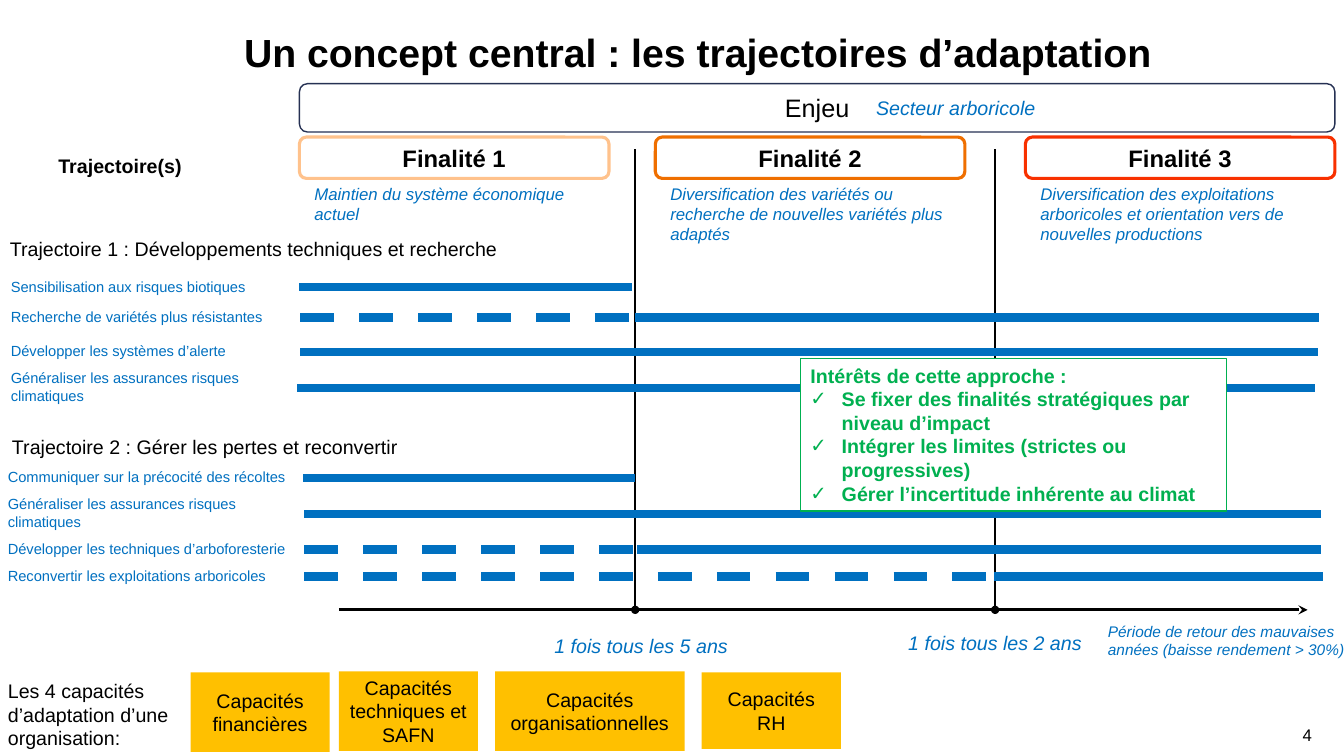
"""Build the slide on adaptation pathways for the fruit-growing sector."""
from lxml import etree
from pptx import Presentation
from pptx import util as u
from pptx.dml.color import RGBColor
from pptx.enum import dml, shapes, text
from pptx.oxml import ns

COLORS = {"black": "000000", "white": "FFFFFF", "blue": "0070C0", "green": "00B050",
          "gold": "FFC000", "navy": "263153"}
FONT = "Arial"
SLIDE_WIDTH, SLIDE_HEIGHT = 13.33, 7.5
TITLE = "Un concept central : les trajectoires d’adaptation"

GOALS = [
    (2.97, 0.5, "FFC28C", "Finalité 1", "Maintien du système économique actuel"),
    (6.5, 0.71, "EF6F00", "Finalité 2",
     "Diversification des variétés ou recherche de nouvelles variétés plus adaptés"),
    (10.17, 0.71, "F83100", "Finalité 3",
     "Diversification des exploitations arboricoles et orientation vers de nouvelles productions"),
]
GOAL_WIDTH, GOAL_TOP, GOAL_HEIGHT = 3.07, 1.36, 0.41

THRESHOLDS = [(6.3, 5.4, 6.24, "1 fois tous les 5 ans"), (9.87, 8.91, 6.21, "1 fois tous les 2 ans")]
AXIS_Y = 6.05

PATHWAYS = [
    (0, 2.3, 0.01, "Trajectoire 1 : Développements techniques et recherche", [
        (2.85, 1, "Sensibilisation aux risques biotiques", [(2.97, 6.27, False)]),
        (3.15, 1, "Recherche de variétés plus résistantes", [(6.3, 13.08, False), (2.98, 6.31, True)]),
        (3.49, 1, "Développer les systèmes d’alerte", [(2.98, 13.07, False)]),
        (3.85, 2, "Généraliser les assurances risques climatiques", [(2.95, 13.04, False)]),
    ]),
    (0.02, 4.27, -0.02, "Trajectoire 2 : Gérer les pertes et reconvertir", [
        (4.74, 1, "Communiquer sur la précocité des récoltes", [(3.01, 6.3, False)]),
        (5.1, 2, "Généraliser les assurances risques climatiques", [(3.02, 13.1, False)]),
        (5.45, 1, "Développer les techniques d’arboforesterie", [(3.02, 6.33, True), (6.32, 13.1, False)]),
        (5.72, 1, "Reconvertir les exploitations arboricoles", [(3.02, 9.86, True), (9.86, 13.12, False)]),
    ]),
]
LABEL_WIDTH = 3.16
LABEL_HEIGHTS = {1: 0.29, 2: 0.47}

CAPACITIES = [
    (1.89, 6.67, 1.38, 0.79, "Capacités financières"),
    (3.36, 6.66, 1.38, 0.79, "Capacités techniques et SAFN"),
    (4.91, 6.66, 1.88, 0.79, "Capacités organisationnelles"),
    (6.96, 6.67, 1.38, 0.76, "Capacités RH"),
]
BENEFITS = [
    "Intérêts de cette approche :",
    "Se fixer des finalités stratégiques par niveau d’impact",
    "Intégrer les limites (strictes ou progressives)",
    "Gérer l’incertitude inhérente au climat",
]


def rgb(name):
    return RGBColor.from_string(COLORS.get(name, name))


def write(box, lines, size, color="black", bold=False, italic=False,
          align=text.PP_ALIGN.LEFT, anchor=text.MSO_ANCHOR.TOP, wrap=True):
    frame = box.text_frame
    frame.text = "\n".join(lines)
    frame.word_wrap = wrap
    frame.vertical_anchor = anchor
    for para in frame.paragraphs:
        para.alignment = align
        for span in para.runs:
            font = span.font
            font.name, font.size, font.bold, font.italic = FONT, u.Pt(size), bold, italic
            font.color.rgb = rgb(color)


def add_text(slide, place, line, size, **style):
    box = slide.shapes.add_textbox(*map(u.Inches, place))
    write(box, [line], size, **style)


def add_box(slide, place, lines, size, fill=None, line=None, line_width=1.0, rounded=False,
            align=text.PP_ALIGN.CENTER, anchor=text.MSO_ANCHOR.MIDDLE, **style):
    kind = shapes.MSO_SHAPE.ROUNDED_RECTANGLE if rounded else shapes.MSO_SHAPE.RECTANGLE
    box = slide.shapes.add_shape(kind, *map(u.Inches, place))
    box.shadow.inherit = False
    if fill:
        box.fill.solid()
        box.fill.fore_color.rgb = rgb(fill)
    else:
        box.fill.background()
    if line:
        box.line.color.rgb = rgb(line)
        box.line.width = u.Pt(line_width)
    else:
        box.line.fill.background()
    write(box, lines, size, align=align, anchor=anchor, **style)
    return box


def add_line(slide, start, end, color, width, dashed=False, tail=None):
    line = slide.shapes.add_connector(shapes.MSO_CONNECTOR.STRAIGHT, *map(u.Inches, start + end))
    line.line.color.rgb = rgb(color)
    line.line.width = u.Pt(width)
    if dashed:
        line.line.dash_style = dml.MSO_LINE.DASH
    if tail:
        etree.SubElement(line.line._get_or_add_ln(), ns.qn("a:tailEnd"), type=tail)
    etree.SubElement(line._element.spPr, ns.qn("a:effectLst"))


def add_check(para):
    props = para._p.get_or_add_pPr()
    props.set("marL", str(u.Inches(0.31)))
    props.set("indent", str(u.Inches(-0.31)))
    etree.SubElement(props, ns.qn("a:buFont"), typeface=FONT)
    etree.SubElement(props, ns.qn("a:buChar"), char="✓")


def add_heading(slide):
    title = slide.shapes.title
    title.left, title.top, title.width, title.height = map(u.Inches, (2.32, 0.03, 10.76, 1.02))
    write(title, [TITLE], 28, bold=True, anchor=text.MSO_ANCHOR.MIDDLE)
    title.text_frame.paragraphs[0].line_spacing = 0.9
    add_text(slide, (12.33, 7.09, 0.78, 0.4), "4", 12, align=text.PP_ALIGN.RIGHT,
             anchor=text.MSO_ANCHOR.MIDDLE)


def add_goals(slide):
    left, right = GOALS[0][0], GOALS[-1][0] + GOAL_WIDTH
    add_box(slide, (left, 0.83, right - left, 0.48), ["Enjeu"], 18, line="navy", rounded=True)
    add_text(slide, (8.59, 0.9, 1.79, 0.34), "Secteur arboricole", 14, color="blue",
             italic=True, wrap=False)
    add_text(slide, (0.48, 1.48, 1.48, 0.34), "Trajectoire(s)", 14, bold=True)
    for left, height, color, name, detail in GOALS:
        add_box(slide, (left, GOAL_TOP, GOAL_WIDTH, GOAL_HEIGHT), [name], 17, line=color,
                line_width=2.25, rounded=True, bold=True)
        add_text(slide, (left + 0.05, GOAL_TOP + GOAL_HEIGHT, 2.91, height), detail, 12,
                 color="blue", italic=True)


def add_axis(slide):
    add_line(slide, (3.36, AXIS_Y), (12.97, AXIS_Y), "black", 2.25, tail="stealth")
    for x, left, top, label in THRESHOLDS:
        add_line(slide, (x, 1.48), (x, AXIS_Y), "black", 1.5, tail="oval")
        add_text(slide, (left, top, 1.93, 0.34), label, 14, color="blue", italic=True, wrap=False)
    add_text(slide, (10.89, 6.12, 2.77, 0.47),
             "Période de retour des mauvaises années (baisse rendement > 30%)", 11,
             color="blue", italic=True)


def add_pathways(slide):
    for left, top, label_left, name, actions in PATHWAYS:
        add_box(slide, (left, top, 5.25, 0.34), [name], 14, fill="white",
                align=text.PP_ALIGN.LEFT, anchor=text.MSO_ANCHOR.TOP)
        for y, rows, label, bars in actions:
            height = LABEL_HEIGHTS[rows]
            add_text(slide, (label_left, y - height / 2, LABEL_WIDTH, height), label, 10.5,
                     color="blue")
            for start, end, dashed in bars:
                add_line(slide, (start, y), (end, y), "blue", 6, dashed)


def add_capacities(slide):
    add_text(slide, (-0.02, 6.69, 1.88, 0.81), "Les 4 capacités d’adaptation d’une organisation:", 14)
    for *place, name in CAPACITIES:
        add_box(slide, place, [name], 14, fill="gold")


def add_benefits(slide):
    box = add_box(slide, (7.94, 3.56, 4.22, 1.51), BENEFITS, 14, fill="white", line="green",
                  line_width=0.75, color="green", bold=True, align=text.PP_ALIGN.LEFT,
                  anchor=text.MSO_ANCHOR.TOP)
    for para in box.text_frame.paragraphs[1:]:
        add_check(para)


def main():
    deck = Presentation()
    deck.slide_width, deck.slide_height = u.Inches(SLIDE_WIDTH), u.Inches(SLIDE_HEIGHT)
    page = deck.slides.add_slide(deck.slide_layouts[5])
    for add_part in (add_heading, add_goals, add_axis, add_pathways, add_capacities, add_benefits):
        add_part(page)
    deck.save("out.pptx")


if __name__ == "__main__":
    main()
